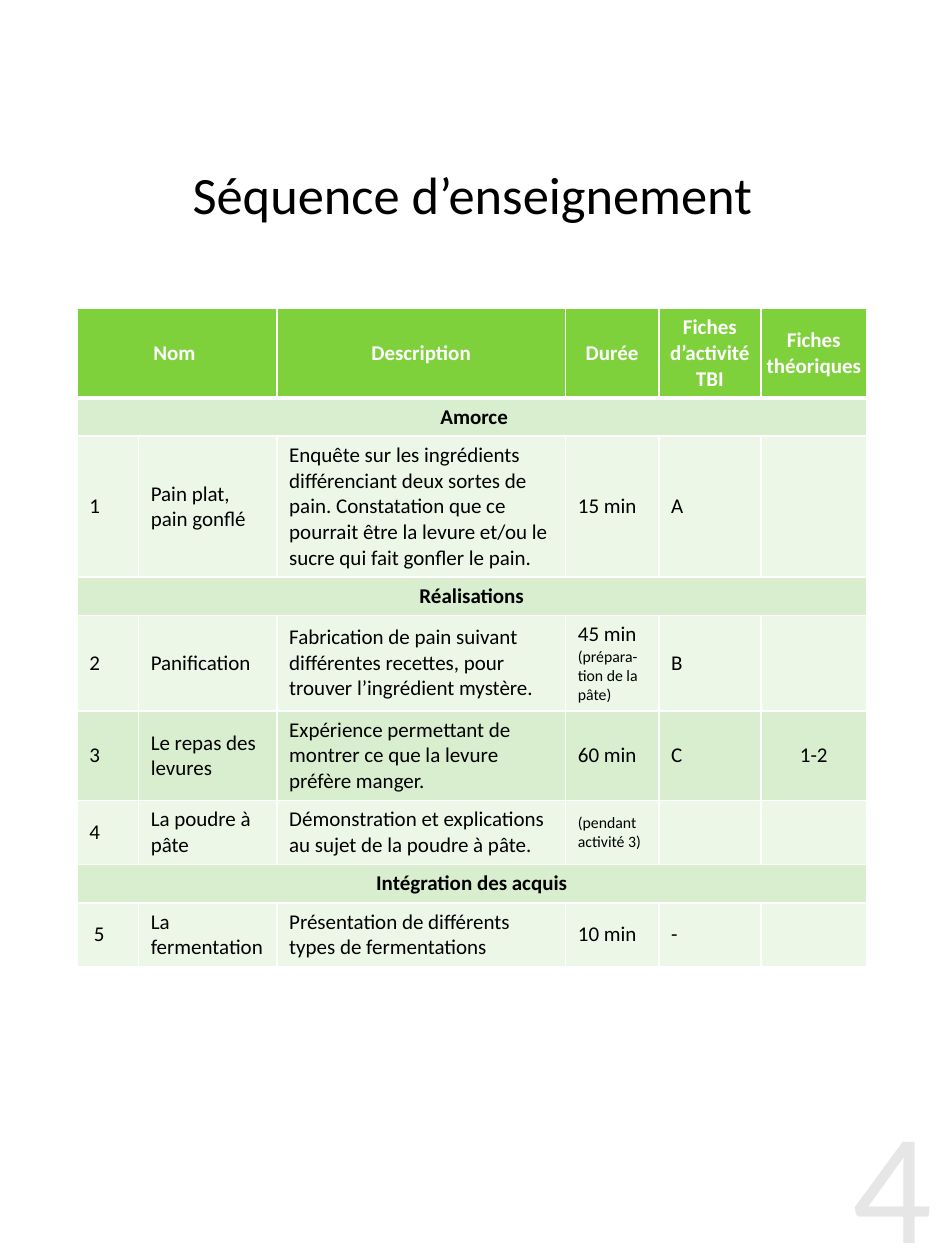
from dataclasses import dataclass

from lxml.etree import SubElement
from pptx import Presentation
from pptx.dml.color import RGBColor
from pptx.enum.text import MSO_ANCHOR, PP_ALIGN
from pptx.oxml.ns import qn
from pptx.util import Cm, Pt


@dataclass(frozen=True)
class Theme:
    """Colours, font and type sizes of the slide."""
    font: str = "Calibri"
    ink: str = "000000"
    white: str = "FFFFFF"
    header: str = "7FD13B"
    band: str = "D8EECE"
    pale: str = "ECF7E8"
    folio: str = "E6E6E6"
    title_size: int = 30
    cell_size: int = 12
    note_size: int = 9
    folio_size: int = 90


THEME = Theme()
COLUMN_WIDTHS = (1.24, 2.79, 5.82, 1.88, 2.06, 2.13)
ROW_HEIGHTS = (1.8, 0.77, 2.84, 0.77, 1.93, 1.8, 1.29, 0.77, 1.29)
HEADINGS = ("Nom ", "", "Description", "Durée", "Fiches d’activité TBI", "Fiches théoriques")
SEQUENCE = (
    HEADINGS,
    (" Amorce",),
    ("1", "Pain plat, pain gonflé",
     "Enquête sur les ingrédients différenciant deux sortes de pain. Constatation que ce "
     "pourrait être la levure et/ou le sucre qui fait gonfler le pain.", "15 min", "A", ""),
    ("Réalisations",),
    ("2", "Panification",
     "Fabrication de pain suivant différentes recettes, pour trouver l’ingrédient mystère.",
     "45 min\n(prépara-tion de la pâte)", "B", ""),
    ("3", "Le repas des levures",
     "Expérience permettant de montrer ce que la levure préfère manger.", "60 min", "C", "1-2"),
    ("4", "La poudre à pâte",
     "Démonstration et explications au sujet de la poudre à pâte.",
     "(pendant activité 3)", "", ""),
    ("Intégration des acquis",),
    (" 5", "La fermentation", "Présentation de différents types de fermentations",
     "10 min", "-", ""),
)


def apply_format(target, values):
    """Set each named attribute on the target."""
    for attribute, value in values.items():
        setattr(target, attribute, value)


def write_text(frame, text, size, color, bold=False, align=PP_ALIGN.LEFT):
    """Write one paragraph per line, with bracketed lines as small notes."""
    frame.text = text
    for paragraph in frame.paragraphs:
        paragraph.alignment = align
        for run in paragraph.runs:
            line_size = THEME.note_size if run.text.startswith("(") else size
            apply_format(run.font, {"name": THEME.font, "size": Pt(line_size), "bold": bold})
            run.font.color.rgb = RGBColor.from_string(color)


def draw_borders(cell, top, bottom):
    """Give the cell white rules of the given top and bottom widths."""
    properties = cell._tc.get_or_add_tcPr()
    for side, width in {"lnL": 1, "lnR": 1, "lnT": top, "lnB": bottom}.items():
        rule = SubElement(properties, qn(f"a:{side}"), w=str(Pt(width)))
        paint = SubElement(rule, qn("a:solidFill"))
        SubElement(paint, qn("a:srgbClr"), val=THEME.white)


def style_cell(cell, fill, top, bottom, margin):
    """Set the borders, fill, anchor and side margins of a cell."""
    draw_borders(cell, top, bottom)
    cell.fill.solid()
    cell.fill.fore_color.rgb = RGBColor.from_string(fill)
    apply_format(cell, {"vertical_anchor": MSO_ANCHOR.MIDDLE,
                        "margin_left": Cm(margin), "margin_right": Cm(margin)})


def fill_row(table, index, entries):
    """Fill a heading, section or activity row."""
    is_header, is_section = index == 0, len(entries) == 1
    last = len(COLUMN_WIDTHS) - 1
    fill = THEME.header if is_header else THEME.band if index % 2 else THEME.pale
    for column in range(last + 1):
        style_cell(table.cell(index, column), fill, 3 if index == 1 else 1,
                   3 if is_header else 1, 0.1 if is_header and column > 2 else 0.25)
    if is_header or is_section:
        table.cell(index, 0).merge(table.cell(index, last if is_section else 1))
    for column, entry in enumerate(entries):
        if entry:
            strong = is_header or is_section
            centred = strong or column == last
            write_text(table.cell(index, column).text_frame, entry, THEME.cell_size,
                       THEME.white if is_header else THEME.ink, strong,
                       PP_ALIGN.CENTER if centred else PP_ALIGN.LEFT)


def add_sequence(slide):
    """Add the table of the teaching sequence."""
    table = slide.shapes.add_table(len(SEQUENCE), len(COLUMN_WIDTHS), Cm(1.55), Cm(6.22),
                                   Cm(sum(COLUMN_WIDTHS)), Cm(sum(ROW_HEIGHTS))).table
    for column, width in zip(table.columns, COLUMN_WIDTHS):
        column.width = Cm(width)
    for row, height in zip(table.rows, ROW_HEIGHTS):
        row.height = Cm(height)
    for index, entries in enumerate(SEQUENCE):
        fill_row(table, index, entries)


def add_title(slide, text):
    """Place and format the title."""
    title = slide.shapes.title
    apply_format(title, {"left": Cm(0), "top": Cm(2.7), "width": Cm(19.05), "height": Cm(2.4)})
    title.text_frame.vertical_anchor = MSO_ANCHOR.MIDDLE
    write_text(title.text_frame, text, THEME.title_size, THEME.ink, align=PP_ALIGN.CENTER)


def add_folio(slide, number):
    """Add the large pale page number in the corner."""
    frame = slide.shapes.add_textbox(Cm(15.8), Cm(21.9), Cm(3), Cm(3.5)).text_frame
    apply_format(frame, {"word_wrap": True, "margin_left": 0, "margin_right": 0,
                         "margin_top": 0, "margin_bottom": 0})
    write_text(frame, number, THEME.folio_size, THEME.folio, align=PP_ALIGN.RIGHT)


def main():
    """Build and save the slide."""
    deck = Presentation()
    apply_format(deck, {"slide_width": Cm(19.05), "slide_height": Cm(25.4)})
    slide = deck.slides.add_slide(deck.slide_layouts[5])
    add_title(slide, "Séquence d’enseignement")
    add_sequence(slide)
    add_folio(slide, "4")
    deck.save("out.pptx")


if __name__ == "__main__":
    main()
